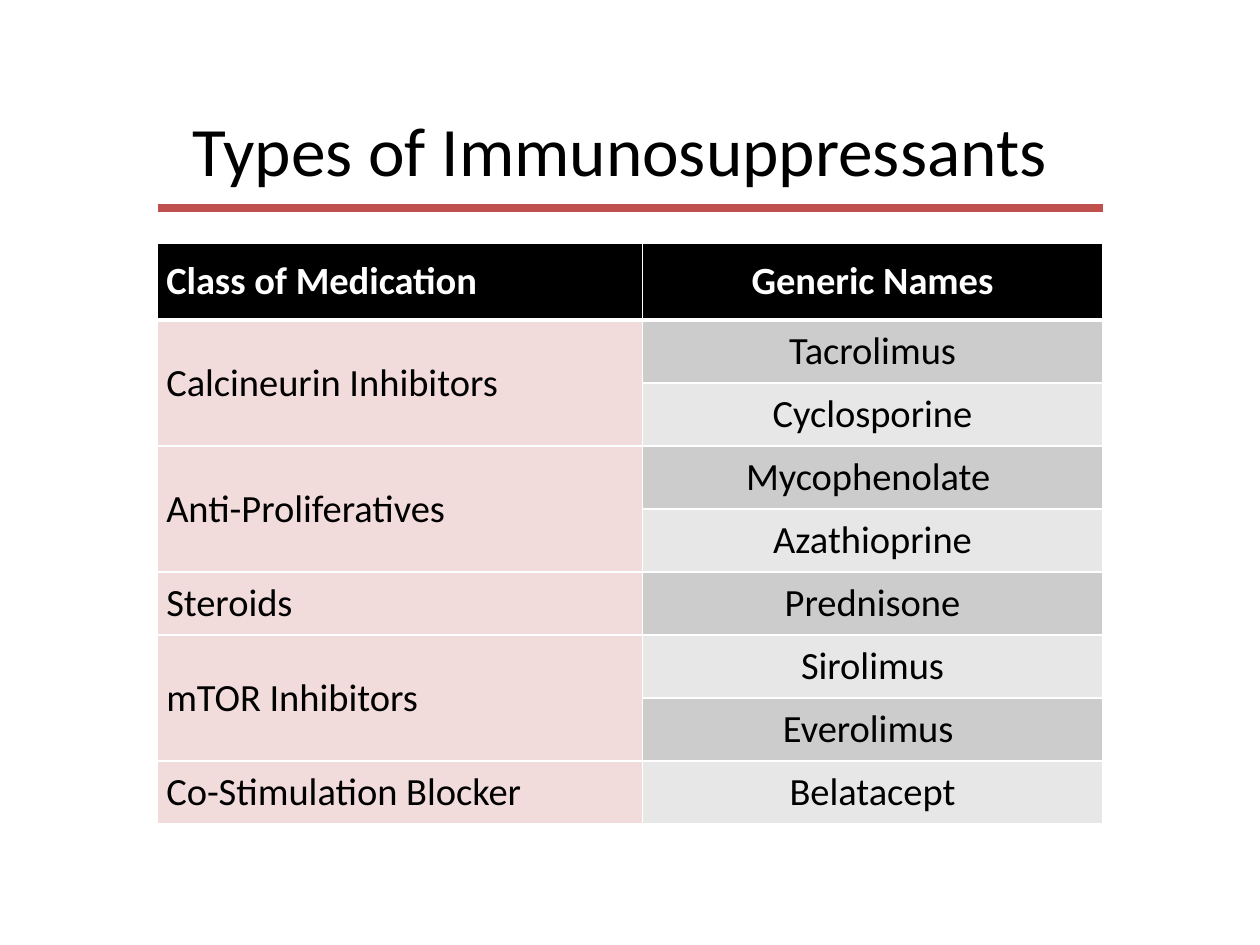
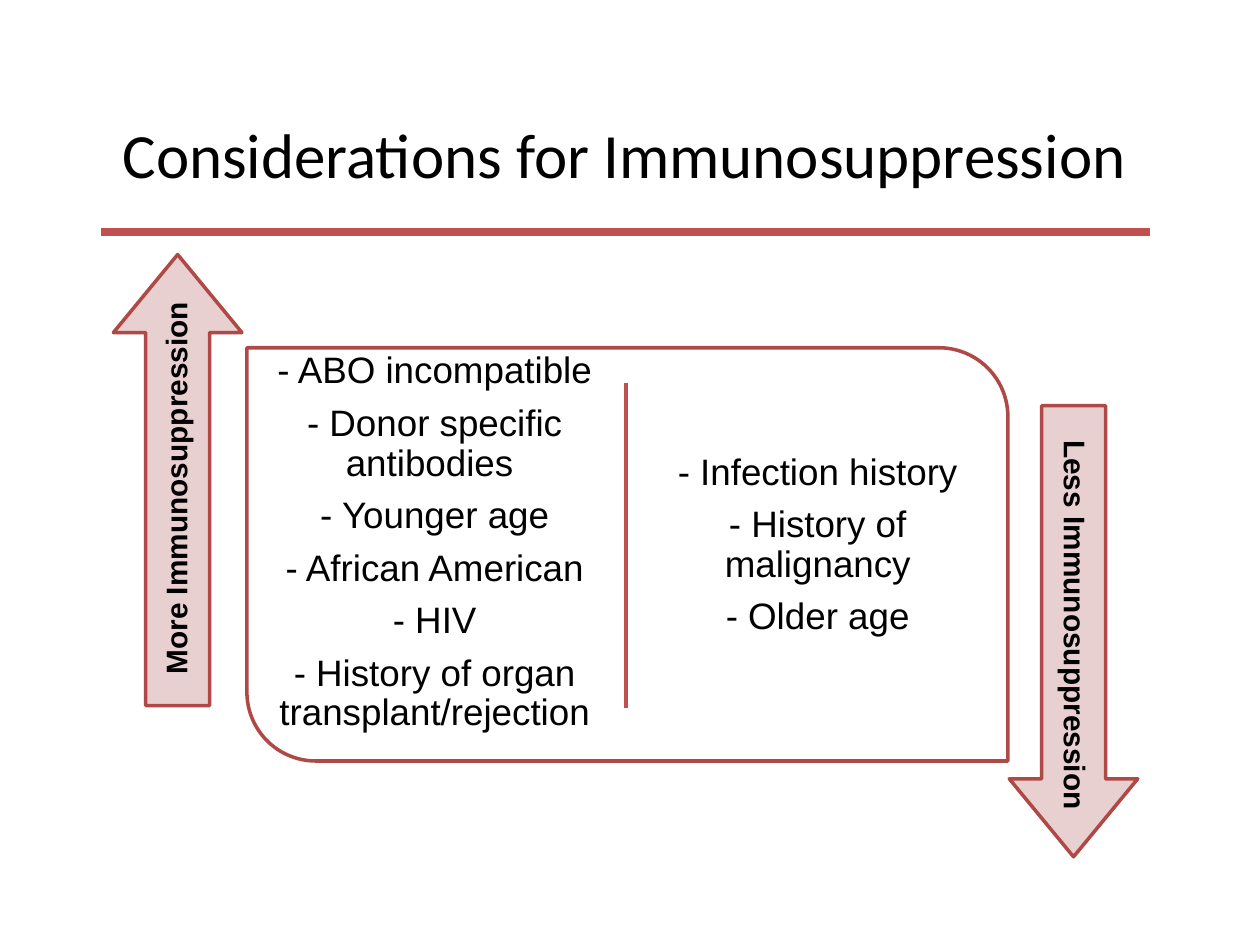
from lxml import etree
from pptx import Presentation
from pptx.dml.color import RGBColor
from pptx.enum.shapes import MSO_CONNECTOR, MSO_SHAPE
from pptx.enum.text import MSO_ANCHOR, MSO_AUTO_SIZE, PP_ALIGN
from pptx.oxml.ns import qn
from pptx.util import Inches, Pt

LEFT, MID, RIGHT = PP_ALIGN.LEFT, PP_ALIGN.CENTER, PP_ALIGN.RIGHT
CENTER = MSO_ANCHOR.MIDDLE
NO_FIT = MSO_AUTO_SIZE.NONE
STRAIGHT = MSO_CONNECTOR.STRAIGHT
PANEL, ARROW = MSO_SHAPE.ROUND_2_DIAG_RECTANGLE, MSO_SHAPE.RIGHT_ARROW

COLORS = {
    "black": "000000", "white": "FFFFFF", "red": "C0504D", "edge": "AE4946",
    "pink": "F2DCDB", "rose": "E8D0D0", "dark": "CCCCCC", "light": "E7E7E7",
}
HEADS = ["Class of Medication", "Generic Names"]
DRUGS = [
    ("Calcineurin Inhibitors", ["Tacrolimus", "Cyclosporine"]),
    ("Anti-Proliferatives", ["Mycophenolate ", "Azathioprine"]),
    ("Steroids", ["Prednisone"]),
    ("mTOR Inhibitors", ["Sirolimus", "Everolimus "]),
    ("Co-Stimulation Blocker", ["Belatacept"]),
]
MORE = ["- ABO incompatible", "- Donor specific antibodies ", "- Younger age",
        "- African American", "- HIV", "- History of organ transplant/rejection"]
LESS = ["- Infection history", "- History of malignancy", "- Older age"]


def rgb(name):
    return RGBColor.from_string(COLORS[name])


def write(frame, lines, size=22, font="Calibri", color="black", bold=False,
          align=MID, inset=None, line=None, after=None):
    """Fill a text frame with one paragraph for each line."""
    frame.word_wrap = True
    frame.vertical_anchor = CENTER
    if inset is not None:
        frame.margin_left = frame.margin_right = Inches(inset)
        frame.margin_top = frame.margin_bottom = Inches(inset)
    for i, words in enumerate(lines):
        para = frame.add_paragraph() if i else frame.paragraphs[0]
        para.alignment = align
        if line:
            para.line_spacing = line
        if after:
            para.space_after = Pt(after)
        run = para.add_run()
        run.text = words
        run.font.size, run.font.name, run.font.bold = Pt(size), font, bold
        run.font.color.rgb = rgb(color)


def add_text(slide, box, lines, size, turn=0, **look):
    """Add a text box whose paragraph gap follows its text size."""
    shape = slide.shapes.add_textbox(*map(Inches, box))
    shape.rotation = turn
    write(shape.text_frame, lines, size, "Arial", line=0.9,
          after=0.35 * size, **look)


def add_line(slide, x1, y1, x2, y2, width):
    line = slide.shapes.add_connector(STRAIGHT, *map(Inches, (x1, y1, x2, y2)))
    line.line.color.rgb = rgb("red")
    line.line.width = Pt(width)
    etree.SubElement(line._element.spPr, qn("a:effectLst"))


def add_shape(slide, kind, box, fill, adjust, turn=0):
    shape = slide.shapes.add_shape(kind, *map(Inches, box))
    shape.shadow.inherit = False
    shape.rotation = turn
    for i, value in enumerate(adjust):
        shape.adjustments[i] = value
    shape.fill.solid()
    shape.fill.fore_color.rgb = rgb(fill)
    shape.line.color.rgb = rgb("edge")
    shape.line.width = Pt(2)


def add_slide(deck, title, box, size, rule):
    """Start a slide with its title and a red rule (left, right, y)."""
    slide = deck.slides.add_slide(deck.slide_layouts[5])
    head = slide.shapes.title
    head.left, head.top, head.width, head.height = map(Inches, box)
    head.text_frame.auto_size = NO_FIT
    write(head.text_frame, [title], size, inset=0.1)
    left, right, y = rule
    add_line(slide, left, y, right, y, 4.5)
    return slide


def set_cell(cell, words, fill, top=1, bottom=1, **look):
    props = cell._tc.get_or_add_tcPr()
    for side, width in (("L", 1), ("R", 1), ("T", top), ("B", bottom)):
        edge = etree.SubElement(props, qn(f"a:ln{side}"), w=str(Pt(width)))
        paint = etree.SubElement(edge, qn("a:solidFill"))
        etree.SubElement(paint, qn("a:srgbClr"), val=COLORS["white"])
    cell.fill.solid()
    cell.fill.fore_color.rgb = rgb(fill)
    cell.vertical_anchor = CENTER
    cell.margin_left = cell.margin_right = Inches(0.07)
    cell.margin_top = cell.margin_bottom = Inches(0.04)
    if words:
        write(cell.text_frame, [words], **look)


def add_drugs(slide, box):
    """Add the drug table, one merged class cell for each group of names."""
    count = sum(len(names) for _, names in DRUGS)
    grid = slide.shapes.add_table(count + 1, 2, *map(Inches, box)).table
    grid.columns[0].width = Inches(3.85)
    grid.columns[1].width = Inches(box[2] - 3.85)
    for i, row in enumerate(grid.rows):
        row.height = Inches(0.5 if i else box[3] - 0.5 * count)
    for col, (words, align) in enumerate(zip(HEADS, (LEFT, MID))):
        set_cell(grid.cell(0, col), words, "black", bottom=3,
                 color="white", bold=True, align=align)
    row = 1
    for group, names in DRUGS:
        first = row
        for name in names:
            top = 3 if row == 1 else 1
            set_cell(grid.cell(row, 0), group if row == first else "",
                     "pink", top, align=LEFT)
            set_cell(grid.cell(row, 1), name,
                     "dark" if row % 2 else "light", top)
            row += 1
        if len(names) > 1:
            grid.cell(first, 0).merge(grid.cell(row - 1, 0))


def add_panel(slide, box):
    """Add the rounded panel with two lists parted by a line."""
    x, y, width, height = box
    add_shape(slide, PANEL, box, "white", (0, 0.167))
    split = x + width / 2 - 0.01
    add_line(slide, split, y + 0.28, split, y + height - 0.42, 2)
    add_text(slide, (x + 0.07, y + 0.16, 2.84, 2.78), MORE, 21, inset=0.09)
    add_text(slide, (split + 0.2, y + 0.18, 2.64, 2.78), LESS, 21, inset=0.09)


def add_arrow(slide, x, y, words, turn):
    """Add a turned arrow centred on x, y, its label set towards the tail."""
    def around(width, height, shift=0):
        return x - width / 2, y + shift - height / 2, width, height

    add_shape(slide, ARROW, around(3.58, 1.02), "rose", (0.498, 0.607), turn)
    shift = 0.15 if turn == 270 else -0.15
    add_text(slide, around(3.27, 0.51, shift), [words], 17, turn,
             bold=True, align=RIGHT, inset=0.07)


def main():
    deck = Presentation()
    deck.slide_width, deck.slide_height = Inches(10), Inches(7.5)

    types = add_slide(deck, "Types of Immunosuppressants",
                      (0.85, 0.83, 8.14, 0.7), 39.6, (1.25, 8.75, 1.65))
    add_drugs(types, (1.25, 1.93, 7.5, 4.61))

    needs = add_slide(deck, "Considerations for Immunosuppression",
                      (0, 0.75, 9.91, 0.94), 36, (0.8, 9.13, 1.84))
    add_panel(needs, (1.96, 2.76, 6.04, 3.28))
    add_arrow(needs, 1.41, 3.81, "More Immunosuppression", 270)
    add_arrow(needs, 8.52, 5.01, "Less Immunosuppression", 90)
    deck.save("out.pptx")


if __name__ == "__main__":
    main()
